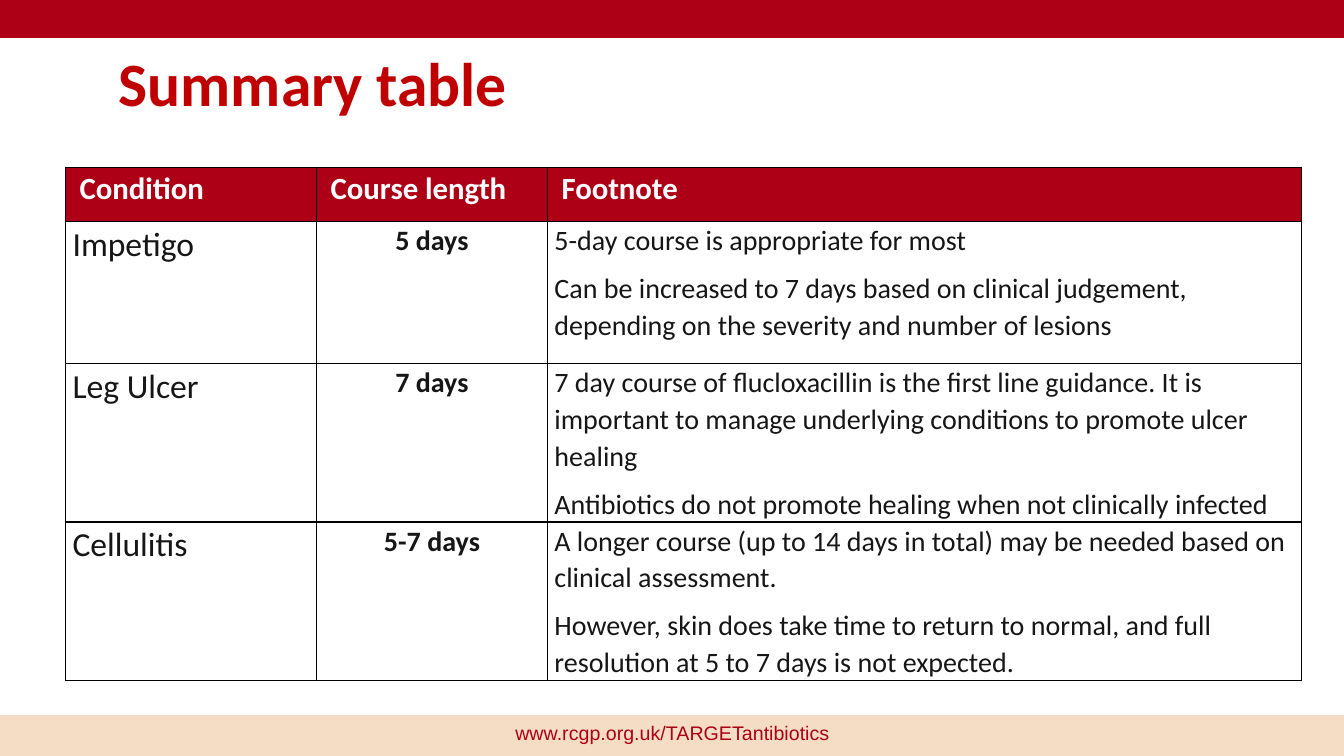
"""Build the antibiotic course length summary slide."""
from lxml.etree import SubElement
from pptx import Presentation
from pptx.dml.color import RGBColor
from pptx.enum.shapes import MSO_SHAPE as SHAPE
from pptx.enum.text import MSO_ANCHOR as ANCHOR, PP_ALIGN as ALIGN
from pptx.oxml.ns import qn
from pptx.util import Inches, Pt

COLORS = {"red": "AD0016", "title": "C00000", "sand": "F4DDC4",
          "ink": "161616", "white": "FFFFFF", "black": "000000"}
TITLE = "Summary table"
FOOTER = "www.rcgp.org.uk/TARGETantibiotics"
BANDS = [("sand", 7.1, 0.4), ("red", -0.01, 0.38)]
HEADERS = ["Condition", "Course length", "Footnote"]
ROWS = [
    ("Impetigo", "5 days", [
        "5-day course is appropriate for most",
        "Can be increased to 7 days based on clinical judgement, "
        "depending on the severity and number of lesions"]),
    ("Leg Ulcer", "7 days", [
        "7 day course of flucloxacillin is the first line guidance. It is "
        "important to manage underlying conditions to promote ulcer healing",
        "Antibiotics do not promote healing when not clinically infected"]),
    ("Cellulitis", "5-7 days", [
        "A longer course (up to 14 days in total) may be needed based on "
        "clinical assessment.",
        "However, skin does take time to return to normal, and full "
        "resolution at 5 to 7 days is not expected."]),
]
COL_WIDTHS = [2.49, 2.29, 7.48]
ROW_HEIGHTS = [0.54, 1.41, 1.57, 1.57]
BODY_STYLES = [(24, False, ALIGN.LEFT), (20, True, ALIGN.CENTER), (20, False, ALIGN.LEFT)]


def rgb(name):
    return RGBColor.from_string(COLORS[name])


def write(tf, lines, size, color, bold=False, align=ALIGN.LEFT, font="Calibri",
          spacing=None, after=None):
    tf.text = "\n".join(lines)
    for p in tf.paragraphs:
        p.alignment = align
        p.line_spacing = spacing
        p.space_after = after
        for r in p.runs:
            r.font.name, r.font.size, r.font.bold = font, Pt(size), bold
            r.font.color.rgb = rgb(color)


def add_text(s, box, lines, size, color, anchor=ANCHOR.TOP, **style):
    tf = s.shapes.add_textbox(*map(Inches, box)).text_frame
    tf.word_wrap = True
    tf.vertical_anchor = anchor
    write(tf, lines, size, color, **style)


def add_borders(cell):
    tc_pr = cell._tc.get_or_add_tcPr()
    for side in ("a:lnL", "a:lnR", "a:lnT", "a:lnB"):
        ln = SubElement(tc_pr, qn(side), w=str(Pt(1)))
        fill = SubElement(ln, qn("a:solidFill"))
        SubElement(fill, qn("a:srgbClr"), val=COLORS["black"])


def fill_cell(cell, lines, size, bold, align, color, back, left=0.07):
    cell.margin_left, cell.margin_right = Inches(left), Inches(0.07)
    cell.margin_top = cell.margin_bottom = 0
    add_borders(cell)
    cell.fill.solid()
    cell.fill.fore_color.rgb = rgb(back)
    write(cell.text_frame, lines, size, color, bold, align, spacing=1.07, after=Pt(8))


def add_summary(s):
    box = (0.65, 1.66, sum(COL_WIDTHS), sum(ROW_HEIGHTS))
    table = s.shapes.add_table(len(ROWS) + 1, len(HEADERS), *map(Inches, box)).table
    table.first_row = table.horz_banding = False
    for col, width in zip(table.columns, COL_WIDTHS):
        col.width = Inches(width)
    for row, height in zip(table.rows, ROW_HEIGHTS):
        row.height = Inches(height)
    for c, header in enumerate(HEADERS):
        fill_cell(table.cell(0, c), [header], 22, True, ALIGN.LEFT, "white", "red", 0.14)
    for r, (condition, length, notes) in enumerate(ROWS, 1):
        for c, lines in enumerate(([condition], [length], notes)):
            fill_cell(table.cell(r, c), lines, *BODY_STYLES[c], "ink", "white")


def main():
    prs = Presentation()
    prs.slide_width, prs.slide_height = Inches(13.33), Inches(7.5)
    s = prs.slides.add_slide(prs.slide_layouts[6])
    for color, top, height in BANDS:
        sp = s.shapes.add_shape(SHAPE.RECTANGLE, 0, Inches(top), prs.slide_width, Inches(height))
        sp.shadow.inherit = False
        sp.fill.solid()
        sp.fill.fore_color.rgb = sp.line.color.rgb = rgb(color)
        sp.line.width = Pt(1)
    add_text(s, (1.08, 0.46, 11.5, 0.79), [TITLE], 44, "title", ANCHOR.MIDDLE,
             bold=True, spacing=0.9)
    add_summary(s)
    add_text(s, (4.42, 7.1, 4.5, 0.4), [FOOTER], 14, "red", align=ALIGN.CENTER, font="Arial")
    prs.save("out.pptx")


if __name__ == "__main__":
    main()
